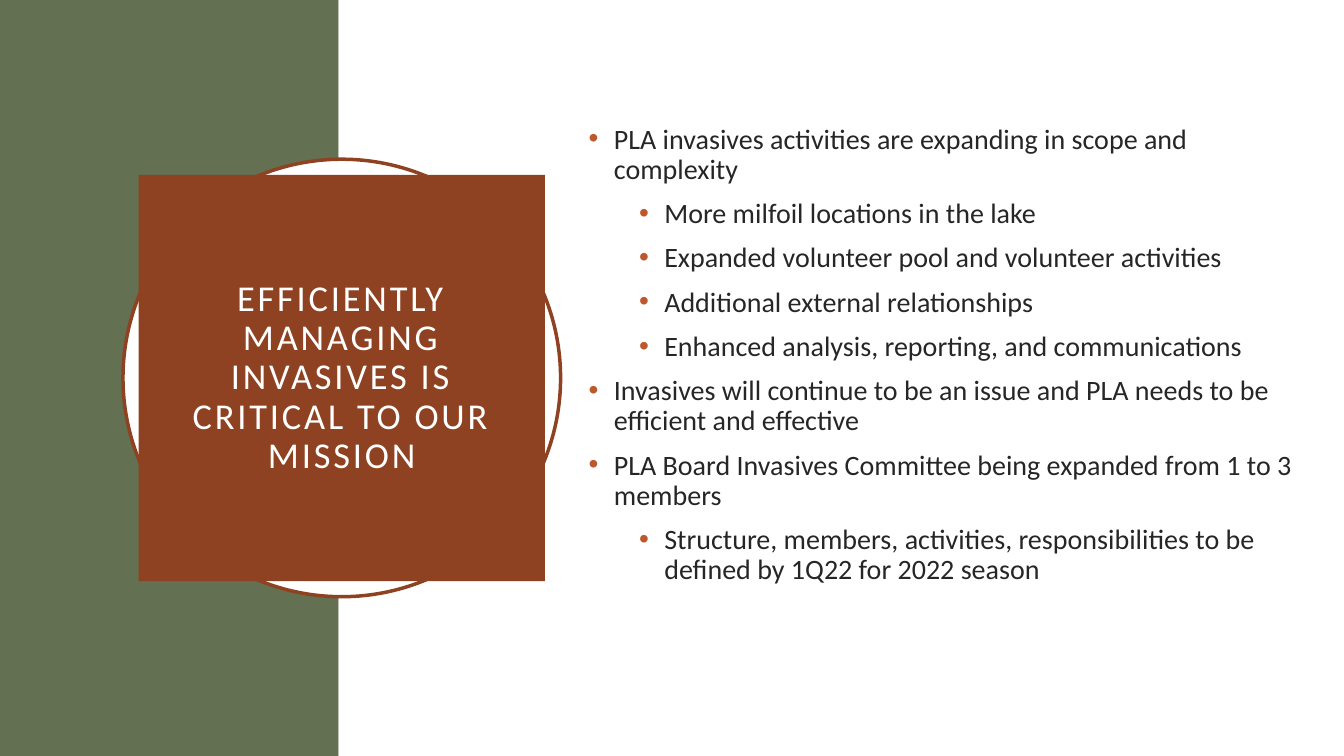
from pptx import Presentation
from pptx.dml.color import RGBColor
from pptx.enum.shapes import MSO_SHAPE
from pptx.enum.text import MSO_ANCHOR, MSO_AUTO_SIZE, PP_ALIGN
from pptx.oxml.ns import qn
from pptx.util import Inches, Pt
from lxml import etree

RECT, OVAL = MSO_SHAPE.RECTANGLE, MSO_SHAPE.OVAL
MIDDLE, NO_FIT = MSO_ANCHOR.MIDDLE, MSO_AUTO_SIZE.NONE
LEFT, CENTER = PP_ALIGN.LEFT, PP_ALIGN.CENTER

TITLE = "EFFICIENTLY MANAGING INVASIVES IS CRITICAL TO OUR MISSION"
POINTS = [
    (0, "PLA invasives activities are expanding in scope and complexity"),
    (1, "More milfoil locations in the lake"),
    (1, "Expanded volunteer pool and volunteer activities"),
    (1, "Additional external relationships"),
    (1, "Enhanced analysis, reporting, and communications"),
    (0, "Invasives will continue to be an issue and PLA needs to be "
        "efficient and effective"),
    (0, "PLA Board Invasives Committee being expanded from 1 to 3 members"),
    (1, "Structure, members, activities, responsibilities to be "
        "defined by 1Q22 for 2022 season"),
]
COLORS = {"green": "637052", "white": "FFFFFF", "rust": "8E4221",
          "bullet": "BD582C", "ink": "262626"}
WIDE, HIGH, BAND = 13.33, 7.5, 3.36
MID_X, MID_Y, RING, CARD = 3.39, 3.75, 4.34, 4.03
BODY = (5.74, 0.5, 7.42, 6.05)


def color(name):
    return RGBColor.from_string(COLORS[name])


def center(size):
    """Box of a square centred on the ring."""
    return MID_X - size / 2, MID_Y - size / 2, size, size


def draw(slide, kind, box, fill, line=None):
    shape = slide.shapes.add_shape(kind, *map(Inches, box))
    shape.shadow.inherit = False
    shape.fill.solid()
    shape.fill.fore_color.rgb = color(fill)
    if line:
        shape.line.color.rgb = color(line)
        shape.line.width = Pt(2.5)
    else:
        shape.line.fill.background()


def bullet(para, level):
    props = para._p.get_or_add_pPr()
    props.set("marL", str(Inches(0.25 + 0.5 * level)))
    props.set("indent", str(Inches(-0.25)))
    tint = etree.SubElement(props, qn("a:buClr"))
    etree.SubElement(tint, qn("a:srgbClr"), val=COLORS["bullet"])
    etree.SubElement(props, qn("a:buFont"), typeface="Arial")
    etree.SubElement(props, qn("a:buChar"), char="•")


def write(para, text, size, ink, align=LEFT, before=0, track=0):
    para.alignment = align
    para.line_spacing = 0.9
    para.space_before = Pt(before)
    run = para.add_run()
    run.text = text
    run.font.name = "Calibri"
    run.font.size = Pt(size)
    run.font.color.rgb = color(ink)
    if track:
        run._r.get_or_add_rPr().set("spc", str(track * 100))


def set_frame(frame):
    frame.word_wrap = True
    frame.auto_size = NO_FIT
    frame.vertical_anchor = MIDDLE


def add_title(slide):
    title = slide.shapes.title
    slide.shapes._spTree.append(title._element)  # bring to front
    title.left, title.top, title.width, title.height = map(
        Inches, center(CARD))
    title.fill.solid()
    title.fill.fore_color.rgb = color("rust")
    frame = title.text_frame
    set_frame(frame)
    frame.margin_left = frame.margin_right = Inches(0.2)
    frame.margin_top = frame.margin_bottom = Inches(0.2)
    write(frame.paragraphs[0], TITLE, 26, "white", align=CENTER, track=2)


def add_body(slide):
    frame = slide.shapes.add_textbox(*map(Inches, BODY)).text_frame
    set_frame(frame)
    for i, (level, text) in enumerate(POINTS):
        para = frame.add_paragraph() if i else frame.paragraphs[0]
        para.level = level
        write(para, text, 20, "ink", before=10)
        bullet(para, level)


def main():
    deck = Presentation()
    deck.slide_width, deck.slide_height = Inches(WIDE), Inches(HIGH)
    slide = deck.slides.add_slide(deck.slide_layouts[5])
    draw(slide, RECT, (0, 0, BAND, HIGH), "green")
    draw(slide, RECT, (BAND, 0, WIDE - BAND, HIGH), "white")
    draw(slide, OVAL, center(RING), "white", line="rust")
    add_title(slide)
    add_body(slide)
    deck.save("out.pptx")


if __name__ == "__main__":
    main()
